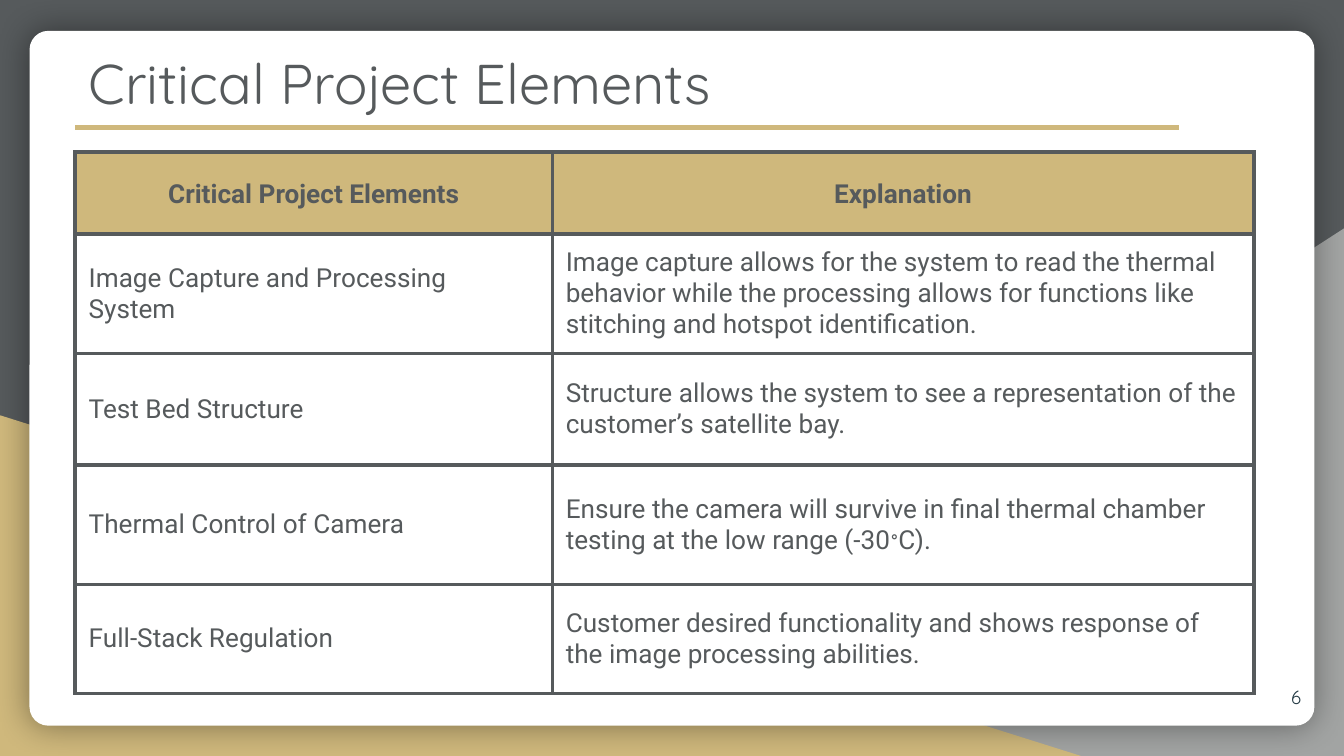
from dataclasses import dataclass

from pptx import Presentation
from pptx.dml.color import RGBColor
from pptx.enum import shapes, text
from pptx.oxml import ns, xmlchemy
from pptx.util import Inches, Pt


@dataclass(frozen=True)
class Theme:
    slate: str = "565A5C"
    gold: str = "CFB87C"
    gray: str = "A2A4A3"
    white: str = "FFFFFF"
    navy: str = "233A44"
    black: str = "000000"
    head: str = "Quicksand"
    body: str = "Roboto"
    title: float = 30
    cell: float = 14
    degree: float = 11
    page: float = 10
    rule: float = 3
    grid: float = 2.25


THEME = Theme()
LEFT, WIDTH = 0.56, 8.77
COLS = [3.55, 5.22]
ROWS = [
    (0.61, "Critical Project Elements", "Explanation"),
    (0.89, "Image Capture and Processing System",
     "Image capture allows for the system to read the thermal behavior while "
     "the processing allows for functions like stitching and hotspot identification."),
    (0.83, "Test Bed Structure",
     "Structure allows the system to see a representation of the customer’s satellite bay."),
    (0.89, "Thermal Control of Camera",
     "Ensure the camera will survive in final thermal chamber testing at the low range (-30°C)."),
    (0.81, "Full-Stack Regulation",
     "Customer desired functionality and shows response of the image processing abilities."),
]


def paint(fill, color):
    fill.solid()
    fill.fore_color.rgb = RGBColor.from_string(color)


def node(parent, tag, **attrs):
    child = xmlchemy.OxmlElement(tag)
    for key, value in attrs.items():
        child.set(key, str(value))
    parent.append(child)
    return child


def write(frame, words, size, font, color=THEME.slate, bold=False,
          align=text.PP_ALIGN.LEFT, anchor=text.MSO_ANCHOR.MIDDLE, line=None, after=0):
    frame.word_wrap = True
    frame.vertical_anchor = anchor
    para = frame.paragraphs[0]
    para.alignment = align
    para.line_spacing = line
    para.space_after = Pt(after)
    for part in words.replace("°", "|°|").split("|"):
        run = para.add_run()
        run.text = part
        run.font.name = font
        run.font.size = Pt(THEME.degree if part == "°" else size)
        run.font.bold = bold
        run.font.color.rgb = RGBColor.from_string(color)


def pad(frame):
    frame.margin_left = frame.margin_right = Inches(0.1)
    frame.margin_top = frame.margin_bottom = Inches(0.1)
    frame.auto_size = text.MSO_AUTO_SIZE.NONE


def panel(slide, kind, box, color):
    shape = slide.shapes.add_shape(kind, *map(Inches, box))
    shape.shadow.inherit = False
    paint(shape.fill, color)
    shape.line.fill.background()
    return shape


def glow(shape, blur, alpha):
    effects = shape._element.spPr.find(ns.qn("a:effectLst"))
    shadow = node(effects, "a:outerShdw", blurRad=Pt(blur), dist=0, dir=0,
                  algn="ctr", rotWithShape=0)
    color = node(shadow, "a:srgbClr", val=THEME.black)
    node(color, "a:alpha", val=alpha * 1000)


def backdrop(slide):
    paint(slide.background.fill, THEME.slate)
    kinds = shapes.MSO_SHAPE
    right = panel(slide, kinds.RIGHT_TRIANGLE, (3.92, 1.7, 6.08, 3.93), THEME.gray)
    right._element.spPr.xfrm.set("flipH", "1")
    panel(slide, kinds.RIGHT_TRIANGLE, (0, 3.09, 8.06, 2.54), THEME.gold)
    card = panel(slide, kinds.ROUNDED_RECTANGLE, (0.22, 0.23, 9.56, 5.17), THEME.white)
    card.adjustments[0] = 0.027
    glow(card, 18, 40)


def rule(slide, left, right, top):
    line = slide.shapes.add_connector(
        shapes.MSO_CONNECTOR.STRAIGHT, *map(Inches, (left, top, right, top)))
    line.line.color.rgb = RGBColor.from_string(THEME.gold)
    line.line.width = Pt(THEME.rule)
    node(line._element.spPr, "a:effectLst")


def heading(slide, words):
    title = slide.shapes.title
    title.left, title.top, title.width, title.height = map(Inches, (LEFT, 0.26, 8.21, 0.69))
    pad(title.text_frame)
    write(title.text_frame, words, THEME.title, THEME.head, anchor=text.MSO_ANCHOR.TOP)
    slide.shapes._spTree.append(title._element)


def number(slide, words):
    box = slide.shapes.add_textbox(*map(Inches, (9.18, 4.97, 0.6, 0.43)))
    pad(box.text_frame)
    write(box.text_frame, words, THEME.page, THEME.head, THEME.navy,
          align=text.PP_ALIGN.RIGHT)


def border(cell):
    props = cell._tc.get_or_add_tcPr()
    for side in ("L", "R", "T", "B"):
        line = node(props, f"a:ln{side}", w=Pt(THEME.grid))
        node(node(line, "a:solidFill"), "a:srgbClr", val=THEME.slate)


def entry(cell, words, head):
    cell.margin_left = cell.margin_right = Inches(0.1)
    cell.margin_top = cell.margin_bottom = Inches(0.1)
    cell.vertical_anchor = text.MSO_ANCHOR.MIDDLE
    border(cell)
    if head:
        paint(cell.fill, THEME.gold)
    else:
        cell.fill.background()
    write(cell.text_frame, words, THEME.cell, THEME.body, bold=head, after=5,
          align=text.PP_ALIGN.CENTER if head else text.PP_ALIGN.LEFT,
          line=1.14 if head else None)


def grid(slide):
    height = sum(row[0] for row in ROWS)
    frame = slide.shapes.add_table(
        len(ROWS), len(COLS), *map(Inches, (LEFT, 1.13, WIDTH, height)))
    table = frame.table
    table.horz_banding = False
    for col, width in zip(table.columns, COLS):
        col.width = Inches(width)
    for r, (tall, *words) in enumerate(ROWS):
        table.rows[r].height = Inches(tall)
        for c, label in enumerate(words):
            entry(table.cell(r, c), label, r == 0)


def main():
    deck = Presentation()
    deck.slide_width = Inches(10)
    deck.slide_height = deck.slide_width * 9 // 16
    slide = deck.slides.add_slide(deck.slide_layouts[5])
    backdrop(slide)
    rule(slide, LEFT, 8.77, 0.95)
    heading(slide, "Critical Project Elements")
    number(slide, "6")
    grid(slide)
    deck.save("out.pptx")


if __name__ == "__main__":
    main()
